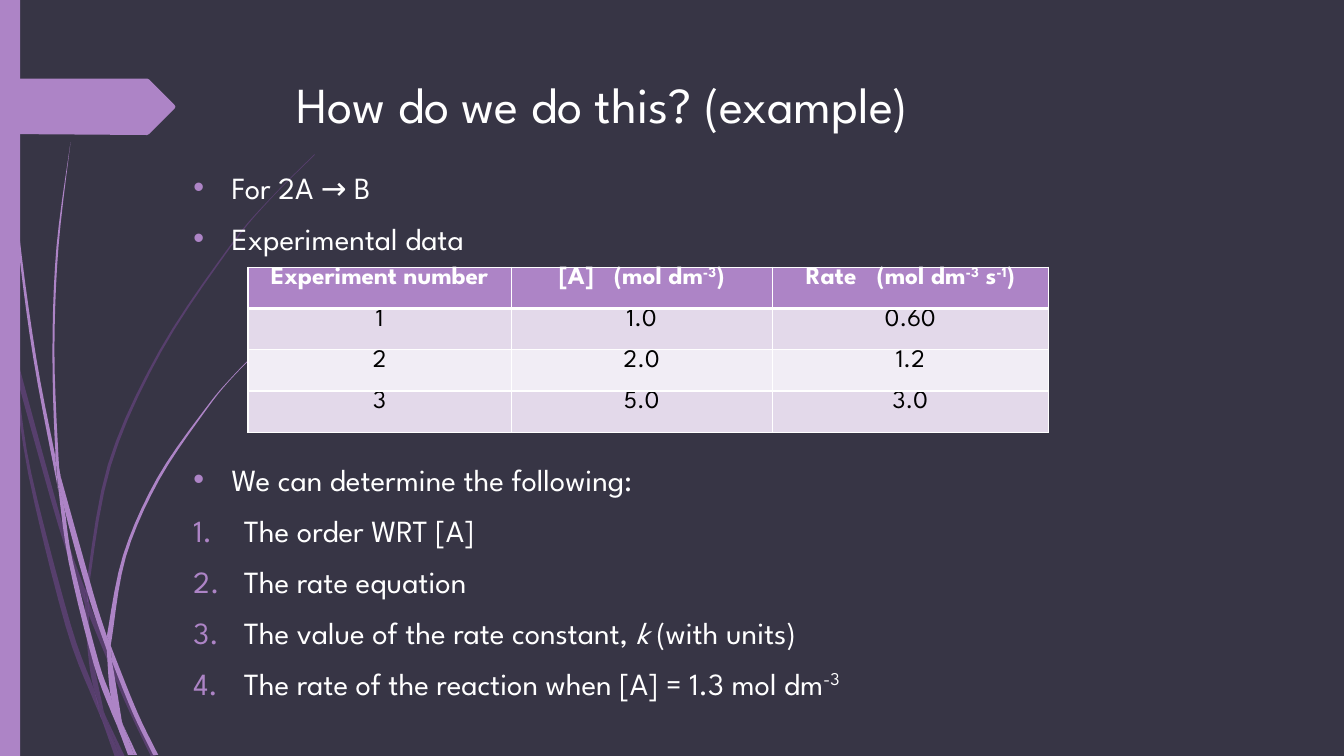
import lxml.etree
import pptx
import pptx.dml.color
import pptx.enum.shapes
import pptx.enum.text
import pptx.oxml.ns
import pptx.util
from pptx.util import Inches

PURPLE, DEEP, WHITE, BLACK = "AD84C6", "874EA9", "FFFFFF", "000000"
SUPERSCRIPT = {"baseline": "30000"}
WIDE_GAP = (" ", {"spc": "950"})

BACK_STALKS = [
    [[(0.11, 3.5), (0.09, 3.22), (0, 2.82)], [(0, 2.99), (0.1, 3.44), (0.11, 3.5)]],
    [[(0.14, 3.45), (0.62, 5.2), (0.85, 5.86)], [(0.84, 5.99), (0.58, 5.22), (0.17, 3.76)]],
    [[(0.88, 5.96), (0.92, 6.07), (1.27, 6.92), (1.55, 7.51)], [(1.5, 7.51), (1.23, 6.94), (0.88, 6.1)]],
    [[(1.05, 7.11), (1.24, 7.51)], [(1.19, 7.51), (1.05, 7.11)]],
    [[(0.11, 3.5), (0.17, 3.76), (0.31, 4.69), (0.7, 6.19), (0.93, 6.83), (0.99, 7.07), (1.01, 7.14)],
     [(0.92, 6.93), (0.65, 6.21), (0.28, 4.7), (0.11, 3.5)]],
    [[(0.84, 5.99), (0.87, 6.46), (0.93, 6.83), (1.05, 7.11)], [(1.03, 7.06), (0.91, 6.46), (0.88, 6.08)]],
    [[(0.88, 5.96), (0.88, 5.84), (1.1, 4.62), (1.6, 3.49), (2.29, 2.45), (2.68, 1.98), (3.12, 1.54)],
     [(3.12, 1.53), (2.68, 1.97), (2.28, 2.44), (1.58, 3.48), (1.07, 4.61), (0.85, 5.84), (0.85, 5.86)]],
    [[(1.01, 7.14), (1.14, 7.51)], [(1.19, 7.51), (1.01, 7.14)]],
    [[(0.88, 6.08), (0.88, 5.96), (0.85, 5.86)], [(0.84, 5.99), (0.88, 6.08)]],
    [[(0.93, 6.83), (0.99, 7.07), (1.01, 7.14), (1.19, 7.51)], [(1.05, 7.11), (0.96, 6.92), (0.93, 6.83)]],
]
FRONT_STALKS = [
    [[(0.03, 0), (0.07, 1.1), (0.17, 2.33), (0.33, 3.55), (0.56, 4.77), (0.57, 4.81)],
     [(0.55, 4.53), (0.36, 3.55), (0.19, 2.32), (0.08, 1.09), (0.04, 0)]],
    [[(0.6, 4.72), (0.93, 5.9), (1.06, 6.31)], [(1.06, 6.45), (0.88, 5.92), (0.64, 5.05), (0.6, 4.72)]],
    [[(1.1, 6.41), (1.36, 7.06), (1.57, 7.49)], [(1.52, 7.49), (1.32, 7.08), (1.11, 6.56)]],
    [[(0.57, 4.77), (0.64, 5.05), (0.72, 5.56), (0.98, 6.57), (1.1, 6.91), (1.17, 7.22)],
     [(1.11, 7.08), (0.93, 6.59), (0.68, 5.57), (0.57, 4.77)]],
    [[(0.6, 4.72), (0.58, 4.53), (0.54, 3.49), (0.58, 2.45), (0.7, 1.41)],
     [(0.7, 1.41), (0.56, 2.45), (0.52, 3.49), (0.55, 4.49), (0.6, 4.72)]],
    [[(1.22, 7.19), (1.36, 7.49)], [(1.33, 7.49), (1.22, 7.19)]],
    [[(0.55, 4.49), (0.6, 4.72), (0.64, 5.05)], [(0.57, 4.77), (0.55, 4.53)]],
    [[(1.1, 6.41), (1.11, 6.33), (1.25, 5.52), (1.58, 4.76), (2.05, 4.06), (2.31, 3.74), (2.61, 3.44)],
     [(2.6, 3.44), (2.31, 3.73), (2.04, 4.05), (1.56, 4.74), (1.22, 5.51), (1.06, 6.31)]],
    [[(1.17, 7.22), (1.27, 7.49)], [(1.31, 7.49), (1.17, 7.22)]],
    [[(1.06, 6.45), (1.1, 6.91), (1.22, 7.19)], [(1.21, 7.16), (1.11, 6.56), (1.06, 6.45)]],
    [[(1.06, 6.31), (1.1, 6.41), (1.11, 6.56)], [(1.06, 6.45), (1.06, 6.31)]],
    [[(1.1, 6.91), (1.17, 7.22), (1.3, 7.49)], [(1.33, 7.49), (1.22, 7.19), (1.1, 6.91)]],
]
TAB_OUTLINE = [(0, 0.78), (1.46, 0.78), (1.48, 0.79), (1.73, 1.04), (1.74, 1.06),
               (1.73, 1.08), (1.48, 1.33), (1.46, 1.34), (0, 1.33)]
BODY = [
    ("•", 10, ["For 2A → B"]),
    ("•", 10, ["Experimental data"]),
    ("•", 146, ["We can determine the following:"]),
    ("1.", 10, ["The order WRT [A]"]),
    ("1.", 10, ["The rate equation"]),
    ("1.", 10, ["The value of the rate constant, ", ("k", {"i": "1"}), " (with units)"]),
    ("1.", 10, ["The rate of the reaction when [A] = 1.3 mol dm", ("-3", SUPERSCRIPT)]),
]
RATE_TABLE = [
    [["Experiment number"],
     ["[A]", WIDE_GAP, "(mol dm", ("-3", SUPERSCRIPT), ")"],
     ["Rate", WIDE_GAP, "(mol dm", ("-3", SUPERSCRIPT), " s", ("-1", SUPERSCRIPT), ")"]],
    [["1"], ["1.0"], ["0.60"]],
    [["2"], ["2.0"], ["1.2"]],
    [["3"], ["5.0"], ["3.0"]],
]


def color(value):
    return pptx.dml.color.RGBColor.from_string(value)


def child(parent, tag, **attributes):
    return lxml.etree.SubElement(parent, pptx.oxml.ns.qn(tag), **attributes)


def smooth_edge(points, steps=5):
    padded = [points[0], *points, points[-1]]
    curve = [points[0]]
    for before, start, end, after in zip(padded, padded[1:], padded[2:], padded[3:]):
        for step in range(1, steps + 1):
            t = step / steps
            curve.append(tuple(
                (2 * b + (c - a) * t + (2 * a - 5 * b + 4 * c - d) * t ** 2
                 + (3 * b - a - 3 * c + d) * t ** 3) / 2
                for a, b, c, d in zip(before, start, end, after)))
    return curve


class SlideBuilder:
    """Holds the slide and its style, and draws each kind of element."""

    font = "League Spartan"

    def __init__(self, slide, background):
        self.slide = slide
        slide.background.fill.solid()
        slide.background.fill.fore_color.rgb = color(background)

    def paint(self, shape, fill):
        shape.shadow.inherit = False
        shape.fill.solid()
        shape.fill.fore_color.rgb = color(fill)
        shape.line.fill.background()

    def rectangle(self, left, top, width, height, fill):
        kind = pptx.enum.shapes.MSO_SHAPE.RECTANGLE
        shape = self.slide.shapes.add_shape(kind, Inches(left), Inches(top), Inches(width), Inches(height))
        self.paint(shape, fill)

    def outline(self, shapes, points, fill, opacity=100):
        corners = [(Inches(x), Inches(y)) for x, y in points]
        builder = shapes.build_freeform(*corners[0])
        builder.add_line_segments(corners[1:], close=True)
        shape = builder.convert_to_shape()
        self.paint(shape, fill)
        if opacity < 100:
            solid = shape._element.spPr.find(pptx.oxml.ns.qn("a:solidFill"))
            child(solid[0], "a:alpha", val=str(opacity * 1000))

    def stalks(self, pieces, fill, opacity=100):
        group = self.slide.shapes.add_group_shape()
        for edges in pieces:
            points = [point for edge in edges for point in smooth_edge(edge)]
            self.outline(group.shapes, points, fill, opacity)

    def fill_paragraph(self, paragraph, runs, size, ink, bold=False):
        paragraph.font.name = self.font
        paragraph.font.size = pptx.util.Pt(size)
        paragraph.font.color.rgb = color(ink)
        paragraph.font.bold = bold
        for item in runs:
            text, attributes = (item, {}) if isinstance(item, str) else item
            run = paragraph.add_run()
            run.text = text
            for name, value in attributes.items():
                run._r.get_or_add_rPr().set(name, value)

    def text_frame(self, left, top, width, height):
        box = self.slide.shapes.add_textbox(Inches(left), Inches(top), Inches(width), Inches(height))
        box.text_frame.word_wrap = True
        return box.text_frame

    def title(self, text, *position):
        self.fill_paragraph(self.text_frame(*position).paragraphs[0], [text], 36, WHITE)

    def bullets(self, items, *position):
        frame = self.text_frame(*position)
        for index, (marker, space, runs) in enumerate(items):
            paragraph = frame.add_paragraph() if index else frame.paragraphs[0]
            paragraph.space_before = pptx.util.Pt(space)
            properties = paragraph._p.get_or_add_pPr()
            indent = Inches(0.38 if marker == "•" else 0.5)
            properties.set("marL", str(indent))
            properties.set("indent", str(-indent))
            child(child(properties, "a:buClr"), "a:srgbClr", val=PURPLE)
            if marker == "•":
                child(properties, "a:buFont", typeface="Arial")
                child(properties, "a:buChar", char=marker)
            else:
                child(properties, "a:buAutoNum", type="arabicPeriod")
            self.fill_paragraph(paragraph, runs, 22, WHITE)

    def border(self, cell, side, points):
        line = child(cell._tc.get_or_add_tcPr(), f"a:ln{side}", w=str(pptx.util.Pt(points)))
        child(child(line, "a:solidFill"), "a:srgbClr", val=WHITE)

    def table(self, rows, left, top, widths, row_height):
        frame = self.slide.shapes.add_table(
            len(rows), len(widths), Inches(left), Inches(top),
            Inches(sum(widths)), Inches(row_height * len(rows)))
        table = frame.table
        table.horz_banding = False
        for column, width in zip(table.columns, widths):
            column.width = Inches(width)
        for row_index, row in enumerate(rows):
            header = row_index == 0
            fill = PURPLE if header else ("F1EDF5", "E3D9EA")[row_index % 2]
            for column_index, runs in enumerate(row):
                cell = table.cell(row_index, column_index)
                cell.margin_top = cell.margin_bottom = 0
                for side in "LRTB":
                    thick = (side, row_index) in (("B", 0), ("T", 1))
                    self.border(cell, side, 3 if thick else 1)
                cell.fill.solid()
                cell.fill.fore_color.rgb = color(fill)
                paragraph = cell.text_frame.paragraphs[0]
                paragraph.alignment = pptx.enum.text.PP_ALIGN.CENTER
                self.fill_paragraph(paragraph, runs, 18, WHITE if header else BLACK, header)


def main():
    presentation = pptx.Presentation()
    presentation.slide_width = Inches(13.33)
    presentation.slide_height = Inches(7.5)
    slide = presentation.slides.add_slide(presentation.slide_layouts[6])
    builder = SlideBuilder(slide, "373545")
    builder.stalks(BACK_STALKS, DEEP, 40)
    builder.stalks(FRONT_STALKS, PURPLE)
    builder.rectangle(0, 0, 0.2, 7.5, PURPLE)
    builder.outline(slide.shapes, TAB_OUTLINE, PURPLE)
    builder.title("How do we do this? (example)", 2.84, 0.68, 9.75, 1.4)
    builder.bullets(BODY, 1.82, 1.62, 10.76, 5.52)
    builder.table(RATE_TABLE, 2.46, 2.65, [2.61, 2.59, 2.74], 0.41)
    presentation.save("out.pptx")


if __name__ == "__main__":
    main()
